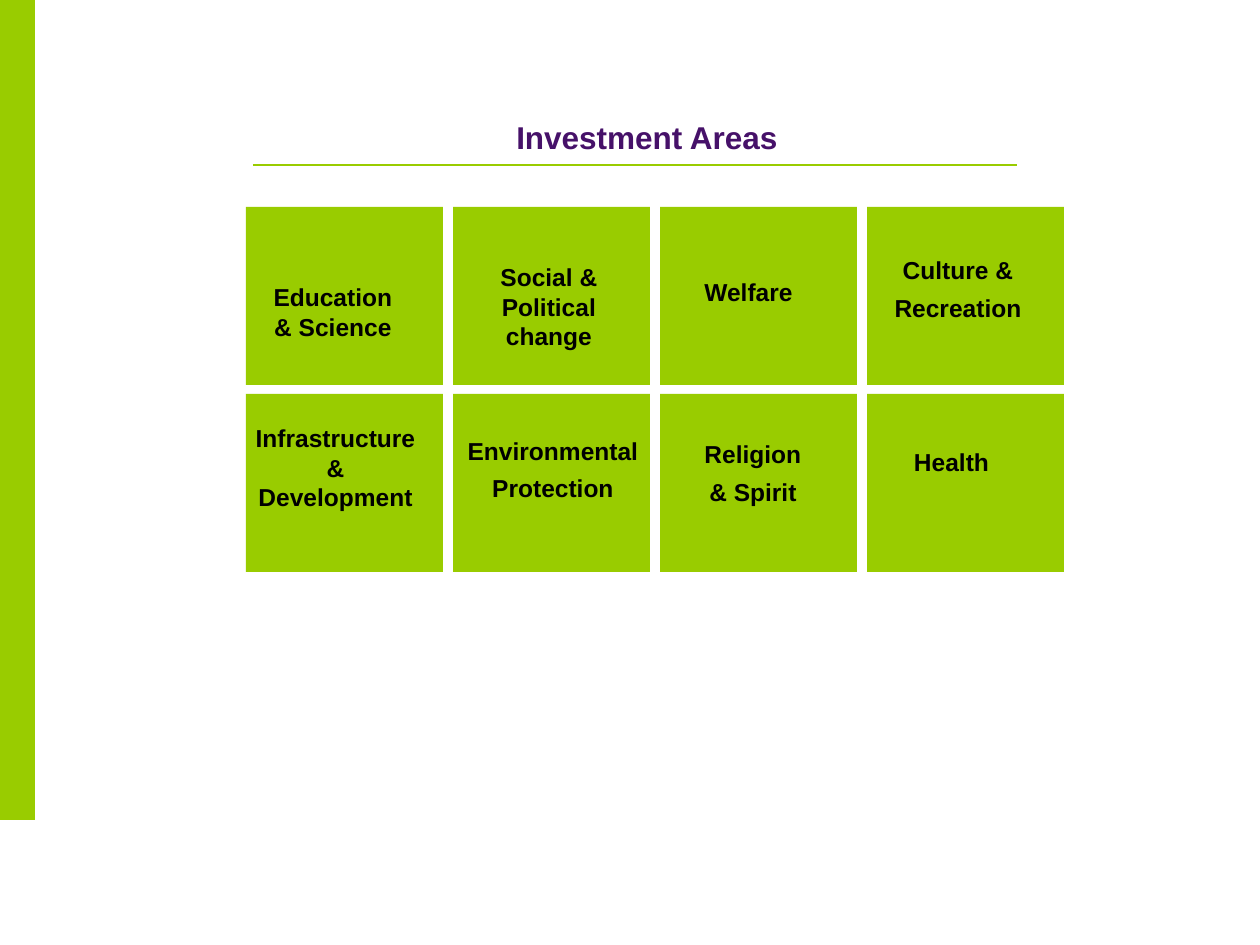
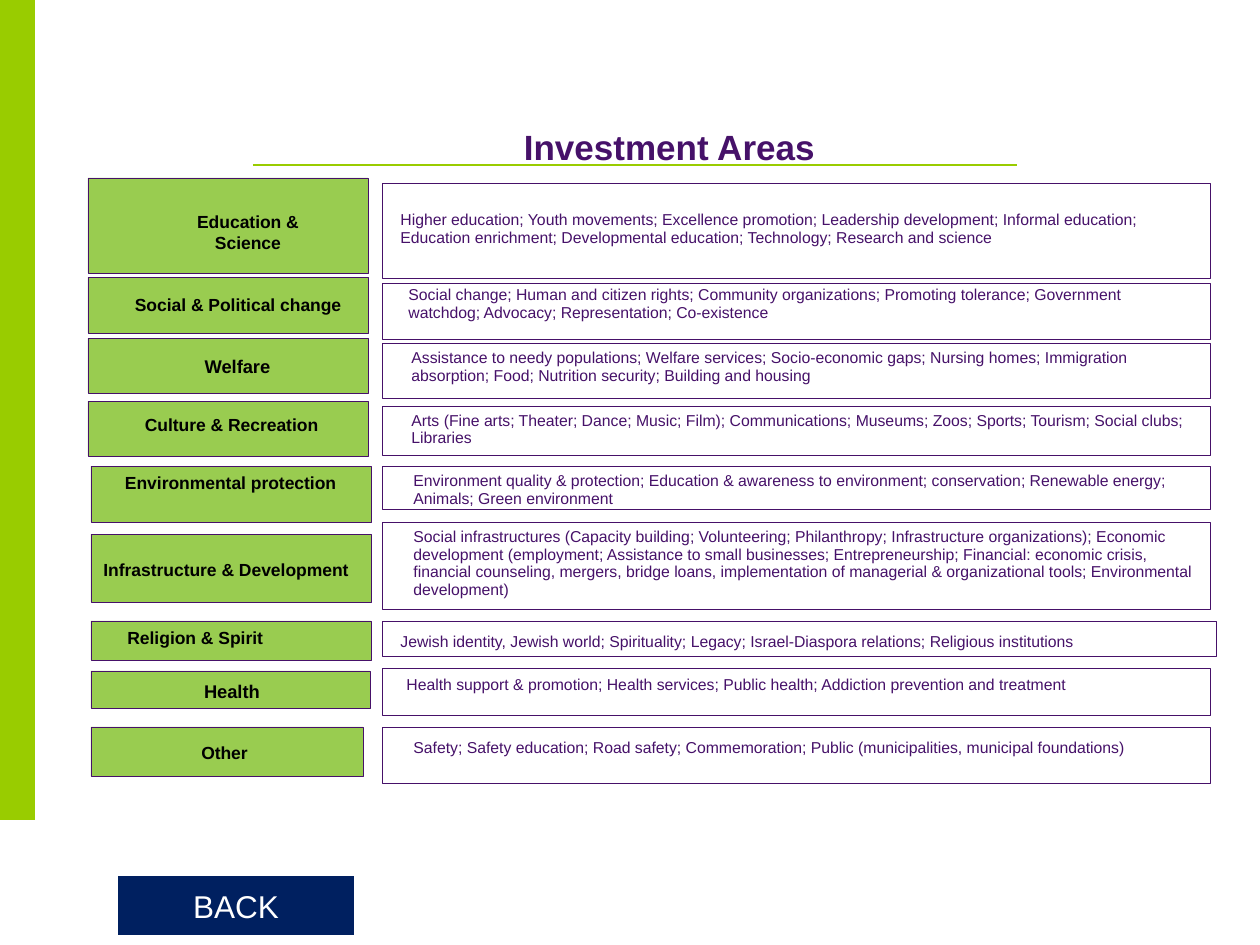
from dataclasses import dataclass
from typing import NamedTuple, Optional

from lxml import etree
from pptx import Presentation
from pptx import util as u
from pptx.dml.color import RGBColor
from pptx.enum import shapes, text
from pptx.oxml.ns import qn
from pptx.slide import Slide

PX = u.Inches(1) / 126
SLIDE_W, SLIDE_H = 1260, 945
FONT = "Arial"
LIME, SOFT_GREEN, PURPLE = "99CC00", "99CC50", "461169"
BLACK, WHITE, NAVY = "000000", "FFFFFF", "002060"
LEFT, CENTER = text.PP_ALIGN.LEFT, text.PP_ALIGN.CENTER
RECT = shapes.MSO_SHAPE.RECTANGLE

TILE_LEFT, TILE_TOP = 246, 207
TILE_W, TILE_H, TILE_GAP = 197, 178, 10
TILES_PER_ROW = 4

DETAIL_LEFT = 382
DETAIL_TEXT_W = 811


class Box(NamedTuple):
    left: int
    top: int
    width: int
    height: int


class Style(NamedTuple):
    size: float
    color: str
    bold: bool = False
    align: text.PP_ALIGN = CENTER
    line_pt: Optional[float] = None
    gap_pt: float = 0


@dataclass
class Area:
    """One tile of the overview, with the place of its caption."""
    caption: str
    box: Box
    gap_pt: float = 0


@dataclass
class Category:
    """One row of the detail slide: a name cell and its list of topics."""
    name: str
    name_cell: Box
    name_box: Box
    topics: str
    topics_top: int
    topics_h: int
    text_left: int
    text_top: int
    topics_w: int = 828
    name_size: float = 10
    name_align: text.PP_ALIGN = CENTER


AREAS = [
    Area("Education\n& Science", Box(258, 276, 150, 72)),
    Area("Social & Political change", Box(462, 256, 174, 110)),
    Area("Welfare", Box(688, 271, 121, 43)),
    Area("Culture &\nRecreation", Box(878, 249, 160, 80), 4.5),
    Area("Infrastructure\n& Development", Box(239, 417, 193, 110)),
    Area("Environmental\nProtection", Box(452, 430, 202, 80), 4.5),
    Area("Religion\n& Spirit", Box(689, 433, 128, 80), 4.5),
    Area("Health", Box(898, 441, 107, 43)),
]

CATEGORIES = [
    Category("Education & Science", Box(88, 178, 280, 95), Box(159, 205, 178, 54),
             "Higher education; Youth movements; Excellence promotion; Leadership development; "
             "Informal education; Education enrichment; Developmental education; Technology; "
             "Research and science", 183, 95, 388, 205),
    Category("Social & Political change", Box(88, 277, 280, 56), Box(113, 288, 250, 34),
             "Social change; Human and citizen rights; Community organizations; Promoting "
             "tolerance; Government watchdog; Advocacy; Representation; Co-existence",
             283, 56, 396, 280),
    Category("Welfare", Box(88, 338, 280, 55), Box(179, 349, 117, 35),
             "Assistance to needy populations; Welfare services; Socio-economic gaps; Nursing "
             "homes; Immigration absorption; Food; Nutrition security; Building and housing",
             343, 55, 399, 343, name_size=10.5),
    Category("Culture & Recreation", Box(88, 401, 280, 55), Box(88, 408, 287, 34),
             "Arts (Fine arts; Theater; Dance; Music; Film); Communications; Museums; Zoos; "
             "Sports; Tourism; Social clubs; Libraries", 406, 49, 399, 406),
    Category("Environmental protection", Box(91, 466, 280, 56), Box(88, 466, 285, 34),
             "Environment quality & protection; Education & awareness to environment; "
             "conservation; Renewable energy; Animals; Green environment", 466, 43, 401, 466),
    Category("Infrastructure & Development", Box(91, 534, 280, 68), Box(91, 553, 289, 34),
             "Social infrastructures (Capacity building; Volunteering; Philanthropy; "
             "Infrastructure organizations); Economic development (employment; Assistance to "
             "small businesses; Entrepreneurship; Financial: economic crisis, financial "
             "counseling, mergers, bridge loans, implementation of managerial & organizational "
             "tools; Environmental development)", 522, 87, 401, 522, name_align=LEFT),
    Category("Religion & Spirit", Box(91, 621, 280, 39), Box(115, 621, 256, 34),
             "Jewish identity, Jewish world; Spirituality; Legacy; Israel-Diaspora relations; "
             "Religious institutions", 621, 35, 388, 627, topics_w=834, name_align=LEFT),
    Category("Health", Box(91, 671, 279, 37), Box(105, 674, 254, 35),
             "Health support & promotion; Health services; Public health; Addiction prevention "
             "and treatment", 668, 47, 394, 670, name_size=10.5),
    Category("Other", Box(91, 727, 272, 49), Box(84, 736, 281, 34),
             "Safety; Safety education; Road safety; Commemoration; Public (municipalities, "
             "municipal foundations)", 727, 56, 401, 733),
]


def px(length: int) -> u.Emu:
    return u.Emu(round(length * PX))


def emu(box: Box) -> list[u.Emu]:
    return [px(length) for length in box]


def rgb(color: str) -> RGBColor:
    return RGBColor.from_string(color)


def write(frame, words: str, style: Style, anchor=text.MSO_ANCHOR.TOP) -> None:
    """Fill a text frame, one paragraph per line, and format its runs."""
    frame.word_wrap = True
    frame.vertical_anchor = anchor
    frame.text = words
    for index, paragraph in enumerate(frame.paragraphs):
        paragraph.alignment = style.align
        if style.line_pt:
            paragraph.line_spacing = u.Pt(style.line_pt)
        if index and style.gap_pt:
            paragraph.space_before = u.Pt(style.gap_pt)
        for run in paragraph.runs:
            run.font.name = FONT
            run.font.size = u.Pt(style.size)
            run.font.bold = style.bold
            run.font.color.rgb = rgb(style.color)


def add_text(slide: Slide, box: Box, words: str, style: Style,
             anchor=text.MSO_ANCHOR.TOP) -> None:
    write(slide.shapes.add_textbox(*emu(box)).text_frame, words, style, anchor)


def add_block(slide: Slide, box: Box, fill: str, outline: Optional[str] = None, preset=RECT):
    block = slide.shapes.add_shape(preset, *emu(box))
    block.shadow.inherit = False
    block.fill.solid()
    block.fill.fore_color.rgb = rgb(fill)
    if outline:
        block.line.color.rgb = rgb(outline)
        block.line.width = u.Pt(0.25)
    else:
        block.line.fill.background()
    return block


def add_base(deck, title_box: Box, title_size: int) -> Slide:
    """Start a slide with the side band, the rule and the title."""
    slide = deck.slides.add_slide(deck.slide_layouts[6])
    add_block(slide, Box(0, 0, 35, 820), LIME)
    rule = slide.shapes.add_connector(shapes.MSO_CONNECTOR.STRAIGHT,
                                      px(253), px(165), px(1017), px(165))
    rule.line.color.rgb = rgb(LIME)
    rule.line.width = u.Pt(0.75)
    etree.SubElement(rule._element.spPr, qn("a:effectLst"))
    add_text(slide, title_box, "Investment Areas", Style(title_size, PURPLE, True),
             text.MSO_ANCHOR.MIDDLE)
    return slide


def build_overview(deck) -> None:
    slide = add_base(deck, Box(490, 111, 314, 51), 18)
    for index, area in enumerate(AREAS):
        row, column = divmod(index, TILES_PER_ROW)
        tile = Box(TILE_LEFT + column * (TILE_W + TILE_GAP),
                   TILE_TOP + row * (TILE_H + TILE_GAP - 1), TILE_W, TILE_H)
        add_block(slide, tile, LIME)
        add_text(slide, area.box, area.caption, Style(14, BLACK, True, gap_pt=area.gap_pt))


def build_details(deck) -> None:
    slide = add_base(deck, Box(500, 119, 339, 54), 20)
    topics_style = Style(9, PURPLE, align=LEFT, line_pt=10)
    for item in CATEGORIES:
        add_block(slide, item.name_cell, SOFT_GREEN, PURPLE)
        add_block(slide, Box(DETAIL_LEFT, item.topics_top, item.topics_w, item.topics_h),
                  WHITE, PURPLE)
        add_text(slide, item.name_box, item.name,
                 Style(item.name_size, BLACK, True, item.name_align))
        add_text(slide, Box(item.text_left, item.text_top, DETAIL_TEXT_W, item.topics_h),
                 item.topics, topics_style)
    back = add_block(slide, Box(118, 876, 236, 59), NAVY,
                     preset=shapes.MSO_SHAPE.ACTION_BUTTON_CUSTOM)
    write(back.text_frame, "BACK", Style(18, WHITE), text.MSO_ANCHOR.MIDDLE)


def main() -> None:
    deck = Presentation()
    deck.slide_width, deck.slide_height = px(SLIDE_W), px(SLIDE_H)
    build_overview(deck)
    build_details(deck)
    deck.save("out.pptx")


if __name__ == "__main__":
    main()
